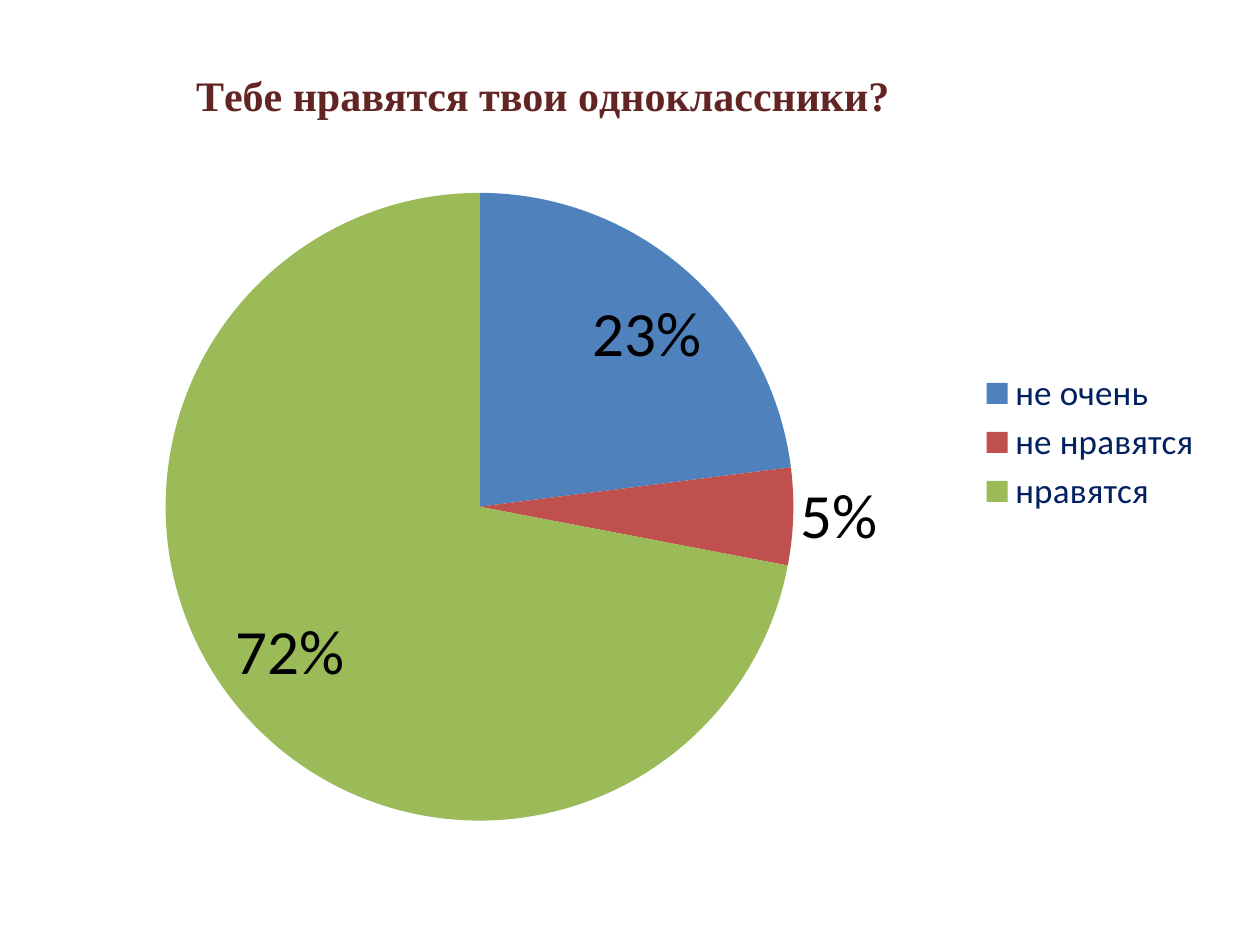
from lxml.etree import SubElement
from pptx import Presentation
from pptx.chart.data import CategoryChartData
from pptx.dml.color import RGBColor
from pptx.enum.chart import XL_CHART_TYPE, XL_LABEL_POSITION, XL_LEGEND_POSITION
from pptx.oxml.ns import qn
from pptx.util import Inches, Pt

ANSWERS = {
    "не очень": (0.23, "4F81BD"),
    "не нравятся": (0.05, "C0504D"),
    "нравятся": (0.72, "9BBB59"),
}


def style_font(font, name, size, color, bold=False):
    font.name, font.size, font.bold = name, Pt(size), bold
    font.color.rgb = RGBColor.from_string(color)


def set_layout(element, index, inner=False, **shares):
    """Place a chart part by shares (x, y, w, h) of the chart's size."""
    for old_layout in element.findall(qn("c:layout")):
        element.remove(old_layout)
    layout = SubElement(element, qn("c:layout"))
    element.insert(index, layout)
    manual = SubElement(layout, qn("c:manualLayout"))
    if inner:
        SubElement(manual, qn("c:layoutTarget"), val="inner")
    for key in ("x", "y"):
        SubElement(manual, qn(f"c:{key}Mode"), val="edge")
    for key, share in shares.items():
        SubElement(manual, qn(f"c:{key}"), val=str(share))


def add_answer_pie(slide, left, top, width, height):
    data = CategoryChartData(number_format="0%")
    data.categories = list(ANSWERS)
    data.add_series("Series 1", [value for value, color in ANSWERS.values()])
    chart = slide.shapes.add_chart(
        XL_CHART_TYPE.PIE, left, top, width, height, data).chart
    style_font(chart.font, "Calibri", 18, "000000")

    # Title
    chart.has_title = True
    title = chart.chart_title
    title.include_in_layout = False
    paragraph = title.text_frame.paragraphs[0]
    paragraph.text = "Тебе нравятся твои одноклассники?"
    style_font(paragraph.font, "Times New Roman", 24, "632523", bold=True)
    set_layout(chart.chart_title._element, 1, x=0.1, y=0.03)

    # Legend
    chart.has_legend = True
    legend = chart.legend
    legend.position = XL_LEGEND_POSITION.RIGHT
    legend.include_in_layout = False
    style_font(legend.font, "Calibri", 20, "002060")
    set_layout(legend._element, 1, x=0.79, y=0.41, w=0.2, h=0.19)

    # Slices and their labels
    plot = chart.plots[0]
    plot.vary_by_categories = True
    for index, (value, color) in enumerate(ANSWERS.values()):
        fill = plot.series[0].points[index].format.fill
        fill.solid()
        fill.fore_color.rgb = RGBColor.from_string(color)
    labels = plot.series[0].data_labels
    labels.show_value = True
    labels.number_format, labels.number_format_is_linked = "0%", False
    labels.position = XL_LABEL_POSITION.BEST_FIT
    style_font(labels.font, "Calibri", 36, "000000")
    plot_area = chart._chartSpace.chart.plotArea
    set_layout(plot_area, 0, inner=True, x=0.08, y=0.19, w=0.55, h=0.79)


def main():
    presentation = Presentation()
    presentation.slide_width, presentation.slide_height = Inches(10), Inches(7.5)
    slide = presentation.slides.add_slide(presentation.slide_layouts[6])
    add_answer_pie(slide, Inches(0.59), Inches(0.29), Inches(9.06), Inches(6.38))
    presentation.save("out.pptx")


if __name__ == "__main__":
    main()
